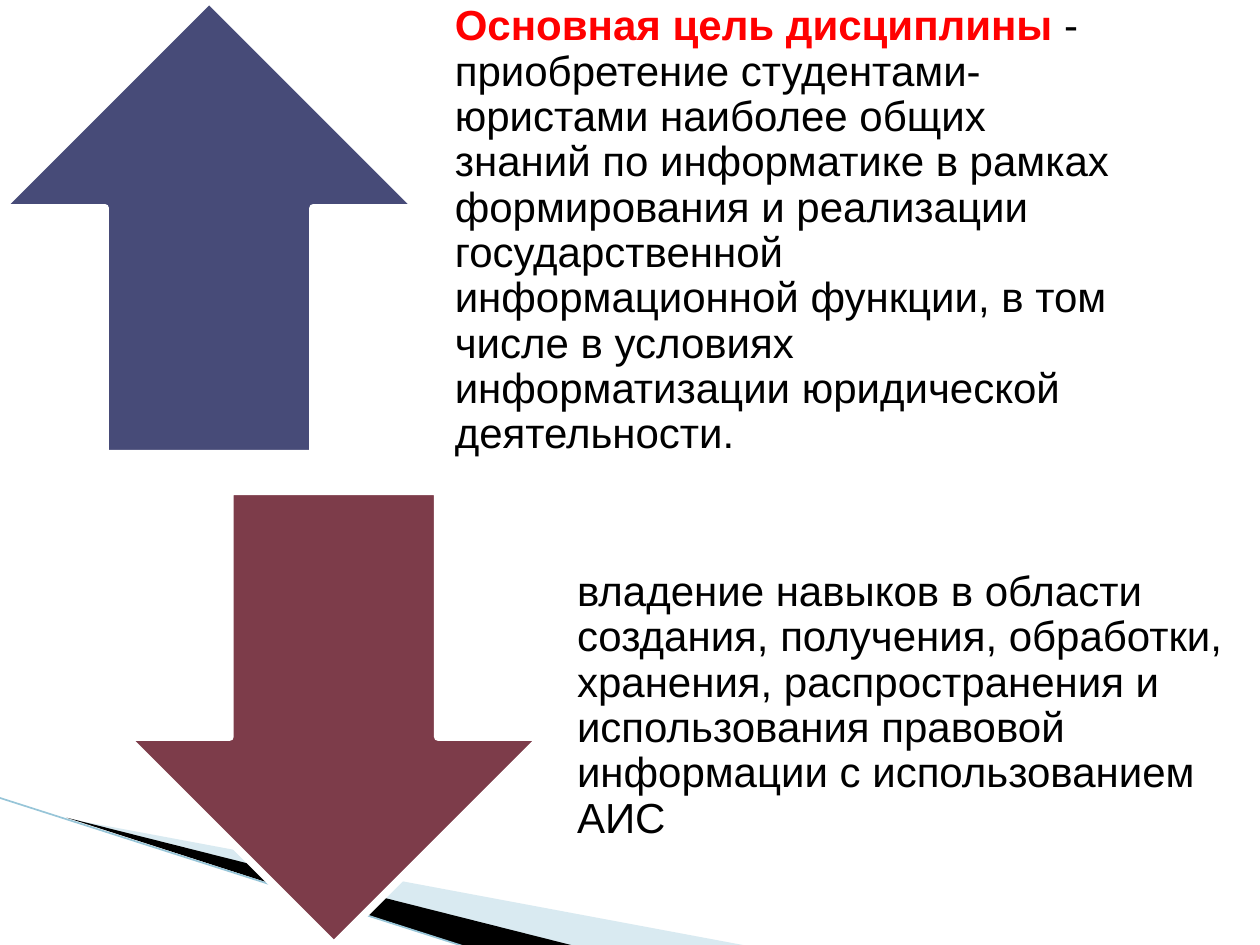
from lxml.etree import SubElement
from pptx import Presentation
from pptx.dml.color import RGBColor
from pptx.enum.shapes import MSO_CONNECTOR, MSO_SHAPE
from pptx.enum.text import MSO_ANCHOR, PP_ALIGN
from pptx.oxml.ns import qn
from pptx.util import Inches, Pt

WHITE = RGBColor(0xFF, 0xFF, 0xFF)
BLACK = RGBColor(0x00, 0x00, 0x00)
RED = RGBColor(0xFF, 0x00, 0x00)
INDIGO = RGBColor(0x47, 0x4B, 0x78)
MAROON = RGBColor(0x7D, 0x3C, 0x4A)
PALE_BLUE = RGBColor(0xA0, 0xCB, 0xDC)
EDGE_BLUE = RGBColor(0x97, 0xC5, 0xD8)

ARROW_WIDTH, TEXT_WIDTH, ROW_HEIGHT = 3.3, 5.6, 3.6

GOAL = [
    ("Основная цель дисциплины ", RED, True),
    ("- приобретение студентами-юристами наиболее общих знаний по информатике "
     "в рамках формирования и реализации государственной информационной функции, "
     "в том числе в условиях информатизации юридической деятельности.", BLACK, False),
]
SKILLS = [
    ("владение навыков в области создания, получения, обработки, хранения, "
     "распространения и использования правовой информации с использованием АИС",
     BLACK, False),
]


def add_wedge(page, points, color, opacity=100):
    """Draw a filled polygon through points given in inches."""
    corners = [(Inches(x), Inches(y)) for x, y in points]
    builder = page.shapes.build_freeform(*corners[0])
    builder.add_line_segments(corners[1:], close=True)
    wedge = builder.convert_to_shape()
    wedge.shadow.inherit = False
    wedge.fill.solid()
    wedge.fill.fore_color.rgb = color
    wedge.line.fill.background()
    if opacity < 100:
        tint = wedge._element.spPr.find(".//" + qn("a:srgbClr"))
        SubElement(tint, qn("a:alpha"), val=str(opacity * 1000))


def add_edge(page, start, end):
    """Draw the thin line along the lower side of the wedges."""
    ends = [Inches(value) for value in (*start, *end)]
    edge = page.shapes.add_connector(MSO_CONNECTOR.STRAIGHT, *ends)
    edge.line.color.rgb = EDGE_BLUE
    edge.line.width = Pt(0.95)
    SubElement(edge._element.spPr, qn("a:effectLst"))


def add_arrow(page, kind, left, top, color):
    """Draw a large block arrow with a white outline."""
    arrow = page.shapes.add_shape(
        kind, Inches(left), Inches(top), Inches(ARROW_WIDTH), Inches(ROW_HEIGHT))
    arrow.shadow.inherit = False
    arrow.fill.solid()
    arrow.fill.fore_color.rgb = color
    arrow.line.color.rgb = WHITE
    arrow.line.width = Pt(4.33)


def add_text(page, left, top, spans):
    """Add a vertically centred paragraph made of coloured spans."""
    box = page.shapes.add_textbox(
        Inches(left), Inches(top), Inches(TEXT_WIDTH), Inches(ROW_HEIGHT))
    frame_format = {
        "word_wrap": True,
        "vertical_anchor": MSO_ANCHOR.MIDDLE,
        "margin_left": Inches(0.19),
        "margin_top": 0,
        "margin_right": Inches(0.19),
        "margin_bottom": Inches(0.19),
    }
    for name, value in frame_format.items():
        setattr(box.text_frame, name, value)
    para = box.text_frame.paragraphs[0]
    para.alignment = PP_ALIGN.LEFT
    para.line_spacing = 0.9
    for text, color, bold in spans:
        span = para.add_run()
        span.text = text
        for name, value in {"name": "Arial", "size": Pt(24), "bold": bold}.items():
            setattr(span.font, name, value)
        span.font.color.rgb = color


def main():
    """Build the slide and save the deck."""
    deck = Presentation()
    deck.slide_width, deck.slide_height = Inches(10), Inches(7.5)
    page = deck.slides.add_slide(deck.slide_layouts[6])

    add_wedge(page, [(0.55, 6.5), (5.95, 7.51), (4.56, 7.51)], PALE_BLUE, opacity=40)
    add_wedge(page, [(0.53, 6.49), (4.57, 7.51), (3.72, 7.52)], BLACK)
    add_edge(page, (-0.01, 6.33), (3.71, 7.52))

    add_arrow(page, MSO_SHAPE.UP_ARROW, 0.01, 0, INDIGO)
    add_text(page, 3.42, 0.13, GOAL)
    add_arrow(page, MSO_SHAPE.DOWN_ARROW, 1, 3.9, MAROON)
    add_text(page, 4.39, 3.9, SKILLS)

    deck.save("out.pptx")


if __name__ == "__main__":
    main()
